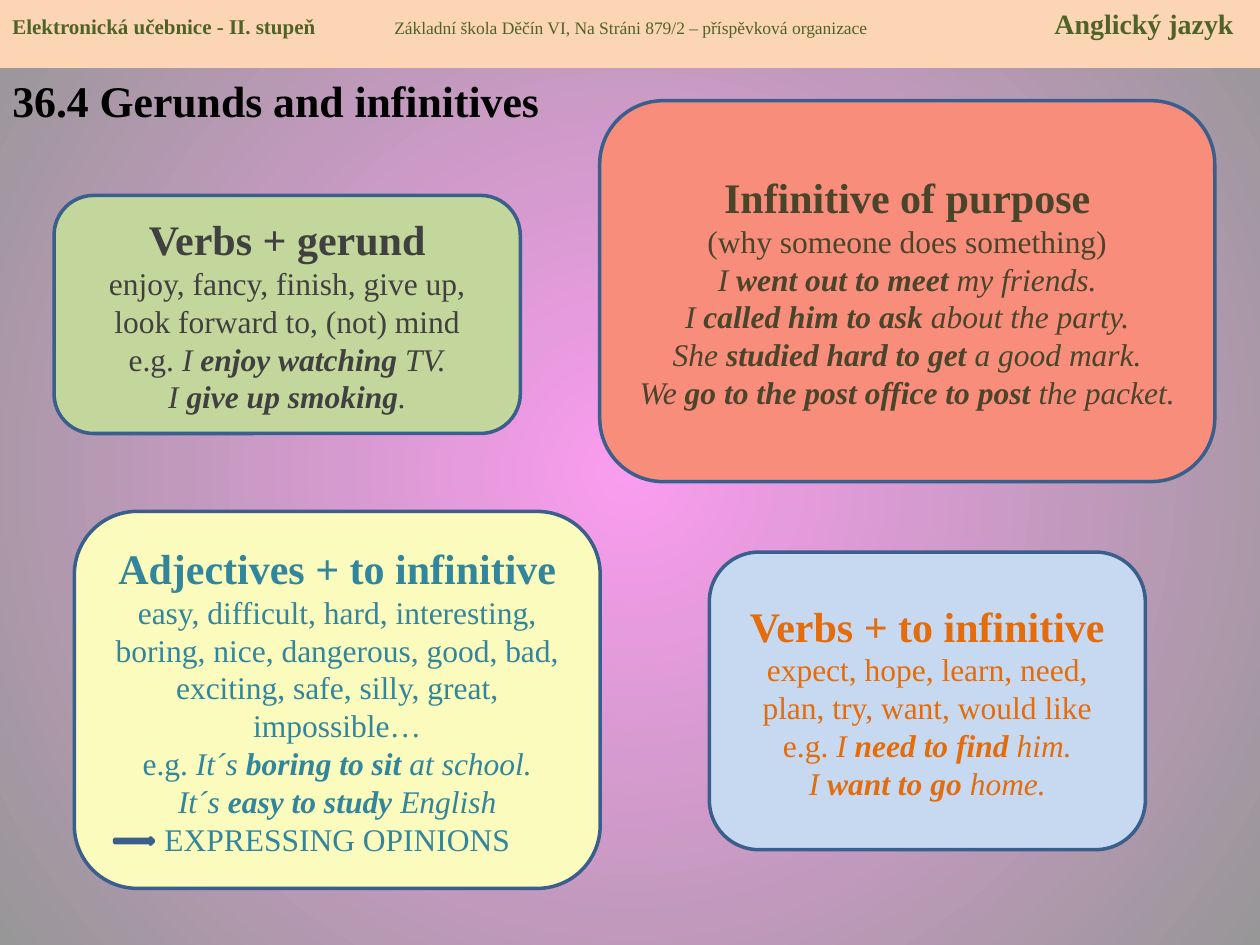
from dataclasses import dataclass

import lxml.etree
import pptx
import pptx.dml.color
import pptx.enum.shapes
import pptx.enum.text
import pptx.oxml.ns
import pptx.util
from pptx.util import Cm

SHAPES = pptx.enum.shapes.MSO_SHAPE
ALIGN = pptx.enum.text.PP_ALIGN
ANCHOR = pptx.enum.text.MSO_ANCHOR
FONT = "Times New Roman"
OUTLINE = "3A5F8C"
HEADER_TEXT = "4F6228"


@dataclass(frozen=True)
class Span:
    text: str
    size: int = 18
    bold: bool = False
    italic: bool = False


Line = tuple[Span, ...]


@dataclass(frozen=True)
class Frame:
    """Left, top, width and height in centimetres."""
    left: float
    top: float
    width: float
    height: float

    def lengths(self) -> tuple:
        return Cm(self.left), Cm(self.top), Cm(self.width), Cm(self.height)


@dataclass(frozen=True)
class Card:
    frame: Frame
    fill: str
    ink: str
    heading: str
    lines: tuple[Line, ...]


def plain(text: str) -> Line:
    return (Span(text),)


def example(start: str, phrase: str, end: str, label: str = "") -> Line:
    """An italic sentence with its key phrase in bold."""
    sentence = (
        Span(start, italic=True),
        Span(phrase, bold=True, italic=True),
        Span(end, italic=True),
    )
    return plain(label) + sentence if label else sentence


CARDS = (
    Card(Frame(1.09, 3.94, 9.4, 4.8), "C3D69B", "404040", "Verbs + gerund", (
        plain("enjoy, fancy, finish, give up, look forward to, (not) mind"),
        example("I ", "enjoy watching ", "TV.", label="e.g. "),
        example("I ", "give up smoking", "."),
    )),
    Card(Frame(14.3, 11.13, 8.79, 6), "C6D9F1", "E46C0A", "Verbs + to infinitive", (
        plain("expect, hope, learn, need, plan, try, want, would like"),
        example("I ", "need to find ", "him.", label="e.g. "),
        example("I ", "want to go ", "home."),
    )),
    Card(Frame(1.5, 10.31, 10.6, 7.6), "FAFBBD", "31859C", "Adjectives + to infinitive", (
        plain("easy, difficult, hard, interesting, boring, nice, dangerous, "
              "good, bad, exciting, safe, silly, great, impossible…"),
        example("It´s ", "boring to sit ", "at school.", label="e.g. "),
        example("It´s ", "easy to study ", "English"),
        plain("EXPRESSING OPINIONS"),
    )),
    Card(Frame(12.09, 2.03, 12.4, 7.68), "F98D7B", "4A452A", "Infinitive of purpose", (
        plain("(why someone does something)"),
        example("I ", "went out to meet ", "my friends."),
        example("I ", "called him to ask ", "about the party."),
        example("She ", "studied hard to get ", "a good mark."),
        example("We ", "go to the post office to post ", "the packet."),
    )),
)


def color(value: str) -> pptx.dml.color.RGBColor:
    return pptx.dml.color.RGBColor.from_string(value)


def add_child(parent, tag: str, **attributes: str):
    return lxml.etree.SubElement(parent, pptx.oxml.ns.qn(tag), attributes)


def paint_background(page, center: str, edge: str) -> None:
    """Radial gradient from the middle of the page outwards."""
    fill = page.background.fill
    fill.gradient()
    for stop, value, position in zip(fill.gradient_stops, (center, edge), (0, 1)):
        stop.color.rgb = color(value)
        stop.position = position
    gradient = next(page.element.iter(pptx.oxml.ns.qn("a:gradFill")))
    gradient.remove(gradient.find(pptx.oxml.ns.qn("a:lin")))
    circle = add_child(gradient, "a:path", path="circle")
    add_child(circle, "a:fillToRect", l="50000", t="50000", r="50000", b="50000")


def add_block(page, kind, frame: Frame, fill: str, outline: str = ""):
    block = page.shapes.add_shape(kind, *frame.lengths())
    block.shadow.inherit = False
    block.fill.solid()
    block.fill.fore_color.rgb = color(fill)
    if outline:
        block.line.color.rgb = color(outline)
        block.line.width = pptx.util.Pt(2)
    else:
        block.line.fill.background()
    return block


def write(box, lines: tuple[Line, ...], ink: str, align, anchor) -> None:
    text_frame = box.text_frame
    text_frame.word_wrap = True
    text_frame.vertical_anchor = anchor
    for index, line in enumerate(lines):
        para = text_frame.add_paragraph() if index else text_frame.paragraphs[0]
        para.alignment = align
        for span in line:
            run = para.add_run()
            run.text = span.text
            run.font.name = FONT
            run.font.size = pptx.util.Pt(span.size)
            run.font.bold = span.bold
            run.font.italic = span.italic
            run.font.color.rgb = color(ink)


def add_header(page) -> None:
    header = add_block(page, SHAPES.RECTANGLE, Frame(0, 0, 25.4, 1.37), "FCD5B5")
    line = (
        Span("Elektronická učebnice - II. stupeň", 12, bold=True),
        Span("\tZákladní škola Děčín VI, Na Stráni 879/2 – příspěvková organizace", 10),
        Span("\tAnglický jazyk", 16, bold=True),
    )
    write(header, (line,), HEADER_TEXT, ALIGN.LEFT, ANCHOR.TOP)
    properties = header.text_frame.paragraphs[0]._p.get_or_add_pPr()
    tabs = add_child(properties, "a:tabLst")
    for position, side in ((7.7, "l"), (24.62, "r")):
        add_child(tabs, "a:tab", pos=str(int(Cm(position))), algn=side)


def add_card(page, card: Card) -> None:
    box = add_block(page, SHAPES.ROUNDED_RECTANGLE, card.frame, card.fill, OUTLINE)
    heading = (Span(card.heading, 24, bold=True),)
    write(box, (heading,) + card.lines, card.ink, ALIGN.CENTER, ANCHOR.MIDDLE)


def main() -> None:
    deck = pptx.Presentation()
    deck.slide_width, deck.slide_height = Cm(25.4), Cm(19.05)
    page = deck.slides.add_slide(deck.slide_layouts[6])
    paint_background(page, "FA9CEF", "979797")

    title = page.shapes.add_textbox(*Frame(0, 1.37, 25.4, 17.68).lengths())
    write(title, ((Span("36.4 Gerunds and infinitives", 25, bold=True),),),
          "000000", ALIGN.LEFT, ANCHOR.TOP)
    add_header(page)
    for card in CARDS:
        add_card(page, card)
    add_block(page, SHAPES.RIGHT_ARROW, Frame(2.31, 16.89, 0.79, 0.13), "4F81BD", OUTLINE)

    deck.save("out.pptx")


if __name__ == "__main__":
    main()
